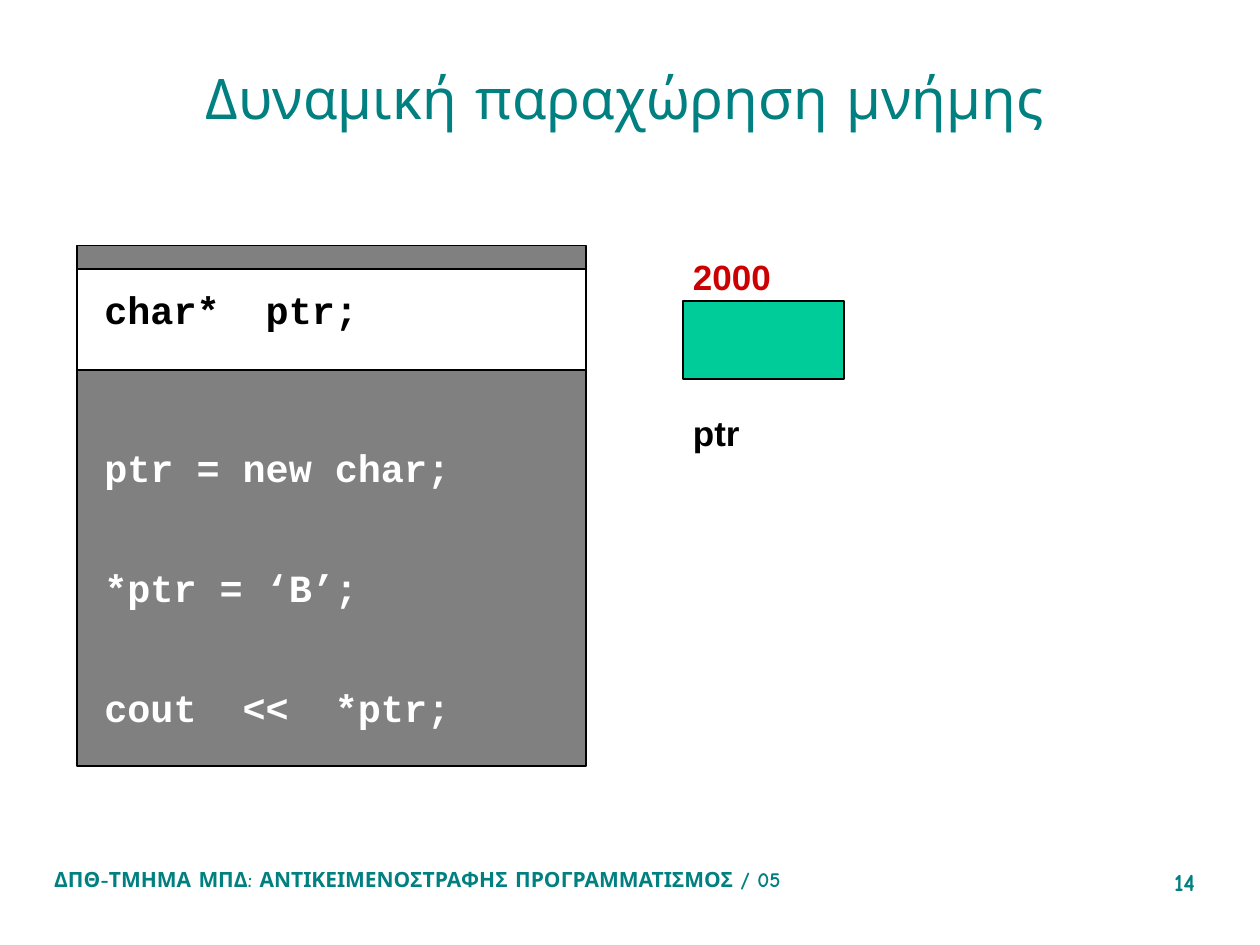
from lxml import etree
from pptx import Presentation
from pptx.dml.color import RGBColor
from pptx.enum.shapes import MSO_SHAPE
from pptx.enum.text import MSO_ANCHOR, MSO_AUTO_SIZE, PP_ALIGN
from pptx.oxml.ns import qn
from pptx.util import Cm, Pt

RECT = MSO_SHAPE.RECTANGLE
TOP, BOTTOM = MSO_ANCHOR.TOP, MSO_ANCHOR.BOTTOM
LEFT, CENTER, RIGHT = PP_ALIGN.LEFT, PP_ALIGN.CENTER, PP_ALIGN.RIGHT

TEAL = RGBColor(0x00, 0x80, 0x80)
GRAY = RGBColor(0x80, 0x80, 0x80)
GREEN = RGBColor(0x00, 0xCC, 0x99)
RED = RGBColor(0xCC, 0x00, 0x00)
BLACK = RGBColor(0x00, 0x00, 0x00)
WHITE = RGBColor(0xFF, 0xFF, 0xFF)


def place(sp, x, y, w, h):
    """Set a shape's box, in centimetres."""
    sp.left, sp.top, sp.width, sp.height = Cm(x), Cm(y), Cm(w), Cm(h)


def bring_to_front(sp):
    sp.element.getparent().append(sp.element)


def add_rect(s, x, y, w, h, fill):
    sp = s.shapes.add_shape(RECT, Cm(x), Cm(y), Cm(w), Cm(h))
    sp.shadow.inherit = False
    sp.fill.solid()
    sp.fill.fore_color.rgb = fill
    sp.line.color.rgb = BLACK
    sp.line.width = Pt(1)


def add_textbox(s, x, y, w, h):
    tf = s.shapes.add_textbox(Cm(x), Cm(y), Cm(w), Cm(h)).text_frame
    tf.word_wrap = True
    return tf


def add_run(p, text, font, size, color, bold=True):
    r = p.add_run()
    r.text = text
    r.font.name = font
    r.font.size = Pt(size)
    r.font.bold = bold
    r.font.color.rgb = color


def write_lines(tf, lines, font, size):
    """Write (text, colour, space before in points) one paragraph each."""
    for i, (text, color, gap) in enumerate(lines):
        p = tf.add_paragraph() if i else tf.paragraphs[0]
        p.alignment = LEFT
        p.space_before = Pt(gap)
        add_run(p, text, font, size, color)


def fill_title(s, x, y, w, h):
    sp = s.shapes.title
    place(sp, x, y, w, h)
    tf = sp.text_frame
    tf.auto_size = MSO_AUTO_SIZE.NONE
    tf.vertical_anchor = BOTTOM
    p = tf.paragraphs[0]
    p.alignment = CENTER
    add_run(p, "Δυναμική παραχώρηση μνήμης", "Comic Neue", 32, TEAL, False)
    bring_to_front(sp)


def add_code_panel(s, x, y, w, h):
    """Gray panel with the current statement on a white band."""
    add_rect(s, x, y, w, h, GRAY)
    add_rect(s, x, y + 0.48, w, 2.03, WHITE)

    body = s.placeholders[1]
    place(body, x + 0.3, y - 0.17, 21.84, 11.81)
    tf = body.text_frame
    tf.auto_size = MSO_AUTO_SIZE.NONE
    tf.vertical_anchor = TOP
    tf.margin_top = Cm(0.9)
    write_lines(tf, [
        ("char*  ptr;", BLACK, 0),
        ("ptr = new char;", WHITE, 61),
        ("*ptr = ‘B’;", WHITE, 39.5),
        ("cout  <<  *ptr;", WHITE, 39.5),
    ], "Courier New", 22)
    for p in tf.paragraphs:
        p.line_spacing = 1.1
        pPr = p._p.get_or_add_pPr()
        pPr.set("marL", str(Cm(0.95)))
        pPr.set("indent", str(-Cm(0.95)))
        etree.SubElement(pPr, qn("a:buNone"))
    bring_to_front(body)


def add_memory_cell(s, x, y, w, h):
    """Variable drawn as a cell, its address above and its name below."""
    add_rect(s, x, y, w, h, GREEN)
    tf = add_textbox(s, x - 0.05, y - 1.05, 9.53, 6.35)
    write_lines(tf, [("2000", RED, 0), ("ptr", BLACK, 65.5)], "Arial", 20)


def add_footer(s, x, y, w, h):
    number_w = 3.18
    course = add_textbox(s, x, y, 19.69, h).paragraphs[0]
    add_run(course, "ΔΠΘ-ΤΜΗΜΑ ΜΠΔ: ΑΝΤΙΚΕΙΜΕΝΟΣΤΡΑΦΗΣ ΠΡΟΓΡΑΜΜΑΤΙΣΜΟΣ / 05",
            "Comic Neue", 12, TEAL)
    number = add_textbox(s, x + w - number_w, y, number_w, h).paragraphs[0]
    number.alignment = RIGHT
    add_run(number, "14", "Comic Neue", 14, TEAL)


def main():
    prs = Presentation()
    prs.slide_width, prs.slide_height = Cm(25.4), Cm(19.05)
    s = prs.slides.add_slide(prs.slide_layouts[1])
    add_footer(s, 0.84, 17.35, 23.5, 1.27)
    add_memory_cell(s, 13.77, 6.07, 3.25, 1.57)
    fill_title(s, 1.7, 0.53, 21.79, 2.24)
    add_code_panel(s, 1.55, 4.95, 10.26, 10.49)
    prs.save("out.pptx")


if __name__ == "__main__":
    main()
